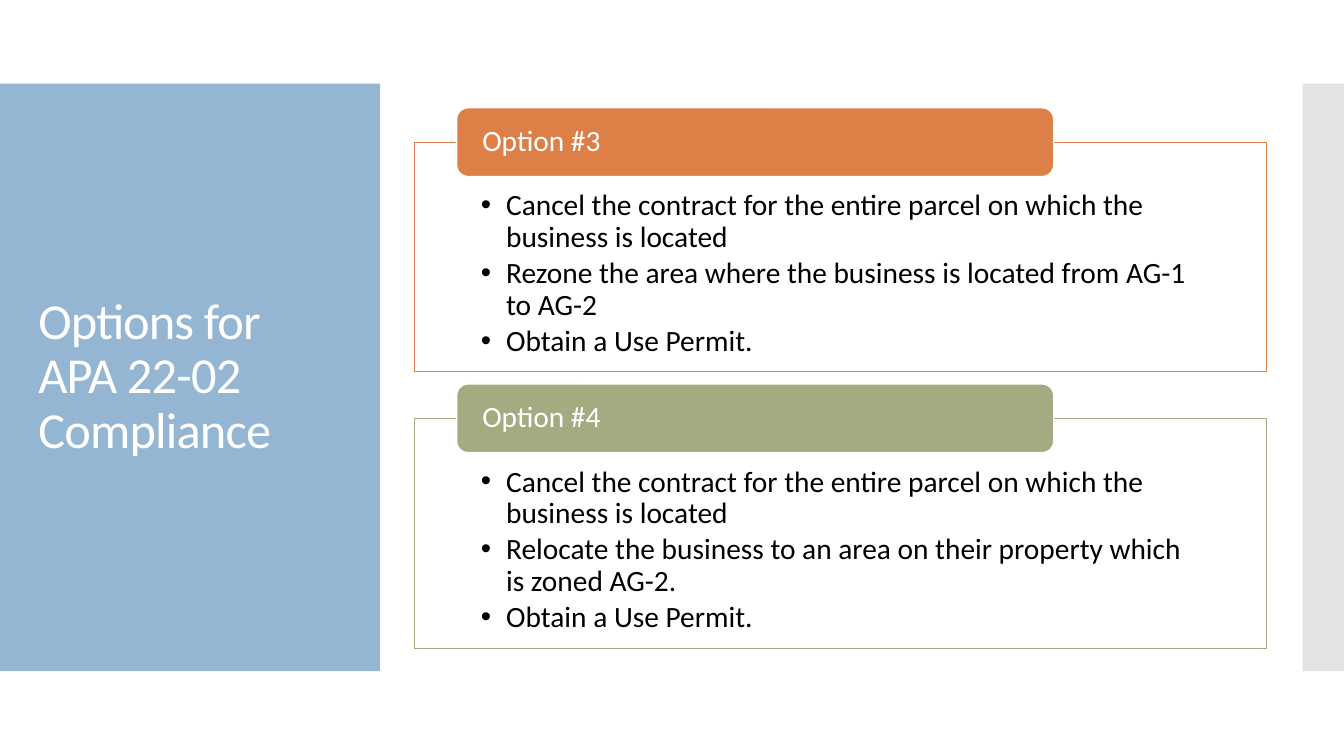
from dataclasses import dataclass

from lxml import etree
from pptx import Presentation
from pptx.dml.color import RGBColor
from pptx.enum import shapes, text
from pptx.oxml import ns
from pptx.util import Inches, Pt

FONT = "Calibri"
WHITE = "FFFFFF"
BLACK = "000000"
BLUE = "94B6D2"
GREY = "E3E3E3"
ORANGE = "DD8047"
GREEN = "A5AB81"

OPTION_TOP = 1.07
OPTION_PITCH = 2.74
BOX_OFFSET = 0.34


@dataclass
class Option:
    heading: str
    color: str
    steps: list[str]


OPTIONS = [
    Option("Option #3", ORANGE, [
        "Cancel the contract for the entire parcel on which the business is located",
        "Rezone the area where the business is located from AG-1 to AG-2",
        "Obtain a Use Permit.",
    ]),
    Option("Option #4", GREEN, [
        "Cancel the contract for the entire parcel on which the business is located",
        "Relocate the business to an area on their property which is zoned AG-2.",
        "Obtain a Use Permit.",
    ]),
]


def rgb(color: str) -> RGBColor:
    return RGBColor.from_string(color)


def add_block(slide, kind, left: float, top: float, width: float, height: float,
              fill: str, line: str | None = None):
    shape = slide.shapes.add_shape(
        kind, Inches(left), Inches(top), Inches(width), Inches(height))
    shape.shadow.inherit = False
    shape.fill.solid()
    shape.fill.fore_color.rgb = rgb(fill)
    if line:
        shape.line.color.rgb = rgb(line)
        shape.line.width = Pt(0.85)
    else:
        shape.line.fill.background()
    return shape


def set_frame(frame, anchor, left: float, top: float, right: float, bottom: float) -> None:
    frame.word_wrap = True
    frame.auto_size = text.MSO_AUTO_SIZE.NONE
    frame.vertical_anchor = anchor
    frame.margin_left, frame.margin_right = Inches(left), Inches(right)
    frame.margin_top, frame.margin_bottom = Inches(top), Inches(bottom)


def format_paragraph(paragraph, size: float, color: str, space_after: float = 0) -> None:
    paragraph.alignment = text.PP_ALIGN.LEFT
    paragraph.line_spacing = 0.9
    paragraph.space_after = Pt(space_after)
    for run in paragraph.runs:
        run.font.name = FONT
        run.font.size = Pt(size)
        run.font.color.rgb = rgb(color)


def add_bullet(paragraph) -> None:
    properties = paragraph._p.get_or_add_pPr()
    properties.set("marL", str(Inches(0.25)))
    properties.set("indent", str(-Inches(0.25)))
    etree.SubElement(properties, ns.qn("a:buFont")).set("typeface", "Arial")
    etree.SubElement(properties, ns.qn("a:buChar")).set("char", "•")


def add_title(slide, wording: str) -> None:
    title = slide.shapes.title
    title.left, title.top = Inches(0.28), Inches(1.23)
    title.width, title.height = Inches(3.22), Inches(5.03)
    title.text_frame.text = wording
    set_frame(title.text_frame, text.MSO_ANCHOR.MIDDLE, 0.1, 0.05, 0.1, 0.05)
    paragraph = title.text_frame.paragraphs[0]
    format_paragraph(paragraph, 36, WHITE)
    paragraph.runs[0].font._element.set("spc", "-60")
    # Bring the title in front of the side panels
    title.element.getparent().append(title.element)


def add_option(slide, option: Option, top: float) -> None:
    box = add_block(slide, shapes.MSO_SHAPE.RECTANGLE,
                    4.11, top + BOX_OFFSET, 8.45, 2.28, WHITE, option.color)
    box.text_frame.text = "\n".join(option.steps)
    set_frame(box.text_frame, text.MSO_ANCHOR.TOP, 0.66, 0.48, 0.66, 0.16)
    for paragraph in box.text_frame.paragraphs:
        format_paragraph(paragraph, 21, BLACK, space_after=3)
        add_bullet(paragraph)

    tab = add_block(slide, shapes.MSO_SHAPE.ROUNDED_RECTANGLE,
                    4.53, top, 5.92, 0.68, option.color, WHITE)
    tab.text_frame.text = option.heading
    set_frame(tab.text_frame, text.MSO_ANCHOR.MIDDLE, 0.22, 0, 0.22, 0)
    format_paragraph(tab.text_frame.paragraphs[0], 21, WHITE)


def main() -> None:
    presentation = Presentation()
    presentation.slide_width = Inches(13.33)
    presentation.slide_height = Inches(7.5)
    slide = presentation.slides.add_slide(presentation.slide_layouts[5])

    add_block(slide, shapes.MSO_SHAPE.RECTANGLE, 0, 0.83, 3.77, 5.83, BLUE)
    add_block(slide, shapes.MSO_SHAPE.RECTANGLE, 12.92, 0.83, 0.41, 5.83, GREY)
    add_title(slide, "Options for APA 22-02 Compliance")
    for index, option in enumerate(OPTIONS):
        add_option(slide, option, OPTION_TOP + index * OPTION_PITCH)

    presentation.save("out.pptx")


if __name__ == "__main__":
    main()
